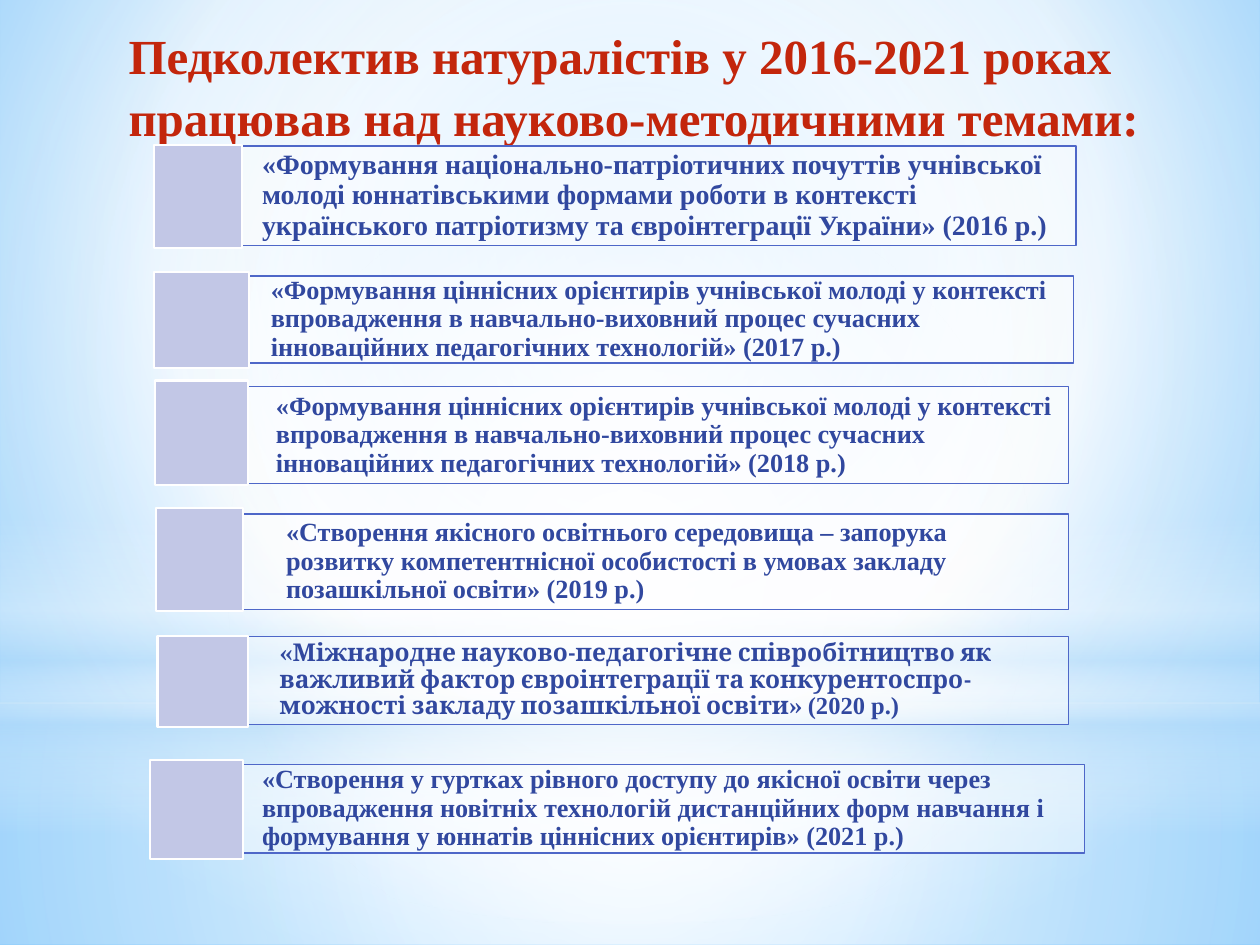
from lxml.etree import SubElement
from pptx import Presentation
from pptx.dml.color import RGBColor
from pptx.enum.shapes import MSO_SHAPE
from pptx.enum.text import MSO_ANCHOR, PP_ALIGN
from pptx.oxml.ns import qn
from pptx.util import Inches, Pt

WIDTH, HEIGHT = 10, 7.5
SERIF = "Times New Roman"
TITLE = ["Педколектив натуралістів у 2016-2021 роках",
         "працював над науково-методичними темами:"]
VALUES_THEME = ("«Формування ціннісних орієнтирів учнівської молоді у контексті впровадження "
                "в навчально-виховний процес сучасних інноваційних педагогічних технологій» ")

# theme, year, theme font, size, frame box, marker box (left, top, width, height)
THEMES = [
    ("«Формування національно-патріотичних почуттів учнівської молоді юннатівськими формами "
     "роботи в контексті українського патріотизму та євроінтеграції України» ",
     2016, SERIF, 16, (1.31, 1.16, 7.23, 0.79), (1.22, 1.15, 0.7, 0.82)),
    (VALUES_THEME, 2017, SERIF, 15, (1.38, 2.19, 7.14, 0.69), (1.22, 2.16, 0.76, 0.76)),
    (VALUES_THEME, 2018, SERIF, 15, (1.42, 3.07, 7.06, 0.77), (1.23, 3.02, 0.74, 0.83)),
    ("«Створення якісного освітнього середовища – запорука розвитку компетентнісної "
     "особистості в умовах закладу позашкільної освіти» ",
     2019, SERIF, 15, (1.5, 4.08, 6.98, 0.76), (1.24, 4.03, 0.69, 0.82)),
    ("«Міжнародне науково-педагогічне співробітництво як важливий фактор євроінтеграції та "
     "конкурентоспро-можності закладу позашкільної освіти» ",
     2020, "Cambria", 14, (1.45, 5.05, 7.03, 0.7), (1.25, 5.05, 0.72, 0.72)),
    ("«Створення у гуртках рівного доступу до якісної освіти через впровадження новітніх "
     "технологій дистанційних форм навчання і формування у юннатів ціннісних орієнтирів» ",
     2021, SERIF, 15, (1.31, 6.07, 7.3, 0.7), (1.19, 6.03, 0.74, 0.79)),
]

# Gradient stops: position %, colour, opacity %
BACKGROUND = [(0, "9ED5FF", 100), (60, "FFFFFF", 100), (100, "5BB9FF", 100)]
CENTRE = (50, 50, 50, 50)
HORIZON = 5.58
# preset, box, stops, focus of a circular gradient (None: vertical linear)
BACKDROP = [
    (MSO_SHAPE.RECTANGLE, (0, HORIZON, WIDTH, HEIGHT - HORIZON),
     [(0, "FFFFFF", 91), (37, "FFFFFF", 76), (100, "B4DCFA", 79)], CENTRE),
    (MSO_SHAPE.RECTANGLE, (0, 0, WIDTH, HORIZON),
     [(0, "FFFFFF", 89), (48, "FFFFFF", 62), (100, "B4DCFA", 79)], CENTRE),
    (MSO_SHAPE.RECTANGLE, (0, 4.12, WIDTH, 2.5),
     [(0, "FFFFFF", 0), (29, "FFFFFF", 30), (45, "B4DCFA", 40), (55, "FFFFFF", 26),
      (65, "B4DCFA", 60), (100, "FFFFFF", 0)], None),
    (MSO_SHAPE.OVAL, (0, 1.75, WIDTH, HORIZON),
     [(0, "FFFFFF", 100), (56, "FFFFFF", 0)], CENTRE),
]


def color(value):
    return RGBColor.from_string(value)


def set_attributes(target, values):
    for name, value in values.items():
        setattr(target, name, value)


def add_alpha(color_element, percent):
    SubElement(color_element, qn("a:alpha"), val=str(percent * 1000))


def set_gradient(fill, owner, stops, focus):
    """Give the fill, found inside the owner element, circular or vertical stops."""
    fill.gradient()
    gradient = next(owner.iter(qn("a:gradFill")))
    for child in list(gradient):
        gradient.remove(child)
    stop_list = SubElement(gradient, qn("a:gsLst"))
    for position, value, opacity in stops:
        stop = SubElement(stop_list, qn("a:gs"), pos=str(position * 1000))
        stop_color = SubElement(stop, qn("a:srgbClr"), val=value)
        if opacity < 100:
            add_alpha(stop_color, opacity)
    if focus:
        circle = SubElement(gradient, qn("a:path"), attrib={"path": "circle"})
        sides = {side: str(share * 1000) for side, share in zip("ltrb", focus)}
        SubElement(circle, qn("a:fillToRect"), attrib=sides)
    else:
        SubElement(gradient, qn("a:lin"), ang="5400000", scaled="0")


def add_box(slide, box, preset=MSO_SHAPE.RECTANGLE):
    shape = slide.shapes.add_shape(preset, *map(Inches, box))
    shape.shadow.inherit = False
    return shape


def paint(shape, fill, line, width):
    shape.fill.solid()
    shape.fill.fore_color.rgb = color(fill)
    shape.line.color.rgb = color(line)
    shape.line.width = Pt(width)


def add_run(paragraph, text, name, size, value):
    run = paragraph.add_run()
    run.text = text
    set_attributes(run.font, {"name": name, "size": Pt(size), "bold": True})
    run.font.color.rgb = color(value)


def add_backdrop(slide):
    set_gradient(slide.background.fill, slide.element, BACKGROUND, (20, 10, 20, 60))
    for preset, box, stops, focus in BACKDROP:
        shape = add_box(slide, box, preset)
        shape.line.fill.background()
        set_gradient(shape.fill, shape.element, stops, focus)


def add_title(slide):
    title = slide.shapes.title
    title.element.getparent().append(title.element)  # in front of the backdrop
    set_attributes(title, {"left": Inches(0.43), "top": Inches(0.13),
                           "width": Inches(9.06), "height": Inches(1.04)})
    frame = title.text_frame
    set_attributes(frame, {"word_wrap": True, "vertical_anchor": MSO_ANCHOR.TOP})
    for index, text in enumerate(TITLE):
        paragraph = frame.add_paragraph() if index else frame.paragraphs[0]
        set_attributes(paragraph, {"alignment": PP_ALIGN.JUSTIFY, "line_spacing": 1.05})
        paragraph._p.get_or_add_pPr().set("indent", str(Inches(0.49)))
        add_run(paragraph, text, SERIF, 28, "C3260C")


def add_theme(slide, theme, year, font, size, frame_box, marker_box):
    panel = add_box(slide, frame_box)
    paint(panel, "FFFFFF", "4E67C8", 0.75)
    add_alpha(next(panel.element.spPr.iter(qn("a:srgbClr"))), 40)
    inset = Inches(0.06)
    set_attributes(panel.text_frame, {
        "word_wrap": True, "vertical_anchor": MSO_ANCHOR.MIDDLE, "margin_left": Inches(0.77),
        "margin_top": inset, "margin_right": inset, "margin_bottom": inset})
    paragraph = panel.text_frame.paragraphs[0]
    set_attributes(paragraph, {"alignment": PP_ALIGN.LEFT, "line_spacing": 0.9})
    add_run(paragraph, theme, font, size, "31489F")
    add_run(paragraph, f"({year} р.)", SERIF, size, "31489F")
    paint(add_box(slide, marker_box), "C2C7E6", "FFFFFF", 1.25)


def main():
    presentation = Presentation()
    set_attributes(presentation, {"slide_width": Inches(WIDTH), "slide_height": Inches(HEIGHT)})
    slide = presentation.slides.add_slide(presentation.slide_layouts[5])
    add_backdrop(slide)
    add_title(slide)
    for theme in THEMES:
        add_theme(slide, *theme)
    presentation.save("out.pptx")


if __name__ == "__main__":
    main()
